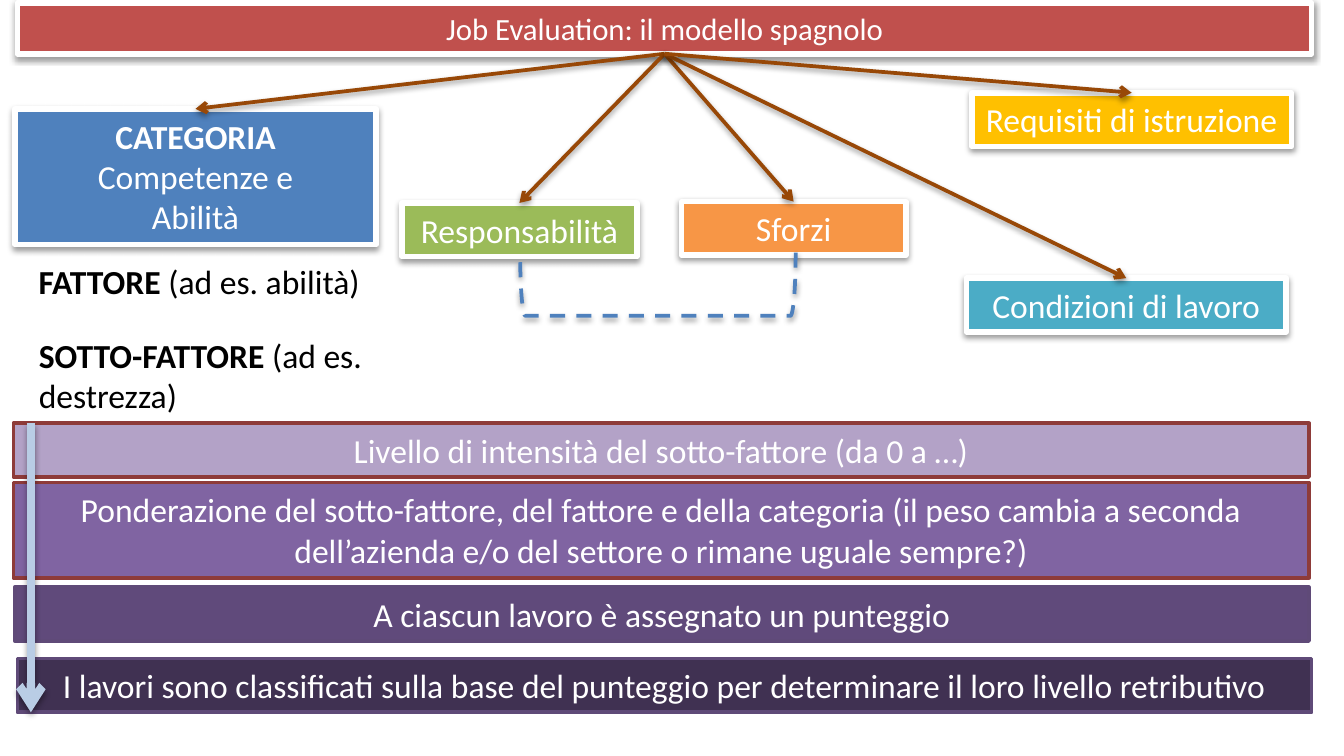
from lxml import etree
from pptx import Presentation
from pptx.dml.color import RGBColor
from pptx.enum import dml, shapes, text
from pptx.oxml import ns
from pptx.util import Inches, Pt

COLORS = {
    "white": "FFFFFF", "black": "000000", "red": "C0504D", "dark red": "8E3B39",
    "blue": "4F81BD", "pale blue": "B9CDE5", "green": "9BBB59", "orange": "F79646",
    "teal": "4BACC6", "gold": "FFC000", "brown": "984807", "lilac": "B3A2C7",
    "violet": "8064A2", "purple": "604A7B", "plum": "5F4A78", "dark purple": "403152",
}

# Content: a text is a list of paragraphs, a paragraph a list of (words, bold)
TITLE = [[("Job Evaluation: il modello spagnolo", False)]]
TITLE_BOX = (0.13, 0.02, 9.63, 0.38)

# text, fill, box
CATEGORIES = [
    ([[("CATEGORIA", True)], [("Competenze e", False)], [("Abilità", False)]],
     "blue", (0.11, 0.81, 2.69, 1.01)),
    ([[("Responsabilità", False)]], "green", (2.99, 1.51, 1.75, 0.4)),
    ([[("Sforzi", False)]], "orange", (5.07, 1.5, 1.67, 0.4)),
    ([[("Condizioni di lavoro", False)]], "teal", (7.19, 2.07, 2.38, 0.4)),
    ([[("Requisiti di istruzione", False)]], "gold", (7.23, 0.69, 2.38, 0.4)),
]

FACTORS = [
    ([[("FATTORE", True), (" (ad es. abilità)", False)]], (0.19, 1.89, 2.63, 0.4)),
    ([[("SOTTO-FATTORE", True), (" (ad es. destrezza)", False)]],
     (0.19, 2.44, 2.62, 0.71)),
]

# words, fill, outline, box
STEPS = [
    ("Livello di intensità del sotto-fattore (da 0 a …)",
     "lilac", "dark red", (0.1, 3.15, 9.64, 0.4)),
    ("Ponderazione del sotto-fattore, del fattore e della categoria (il peso cambia "
     "a seconda dell’azienda e/o del settore o rimane uguale sempre?)",
     "violet", "dark red", (0.1, 3.59, 9.64, 0.71)),
    ("A ciascun lavoro è assegnato un punteggio",
     "purple", "plum", (0.11, 4.37, 9.63, 0.4)),
    ("I lavori sono classificati sulla base del punteggio per determinare il loro "
     "livello retributivo", "dark purple", "plum", (0.13, 4.9, 9.63, 0.4)),
]

# Widescreen slide, 16 to 9
presentation = Presentation()
presentation.slide_width = Inches(10)
presentation.slide_height = Inches(10 * 9 / 16)
slide = presentation.slides.add_slide(presentation.slide_layouts[6])


def rgb(name):
    return RGBColor.from_string(COLORS[name])


def set_shadow(shape, visible):
    effects = etree.SubElement(shape._element.spPr, ns.qn("a:effectLst"))
    if visible:
        shadow = etree.SubElement(effects, ns.qn("a:outerShdw"), blurRad="40000",
                                  dist="20000", dir="5400000", rotWithShape="0")
        color = etree.SubElement(shadow, ns.qn("a:srgbClr"), val=COLORS["black"])
        etree.SubElement(color, ns.qn("a:alpha"), val="38000")


def set_line(shape, color, width):
    shape.line.color.rgb = rgb(color)
    shape.line.width = Pt(width)


def write(shape, paragraphs, size=18, color="white", align=text.PP_ALIGN.CENTER):
    frame = shape.text_frame
    frame.word_wrap = True
    frame.auto_size = text.MSO_AUTO_SIZE.SHAPE_TO_FIT_TEXT
    frame.vertical_anchor = text.MSO_ANCHOR.TOP
    for index, runs in enumerate(paragraphs):
        paragraph = frame.add_paragraph() if index else frame.paragraphs[0]
        paragraph.alignment = align
        for words, bold in runs:
            run = paragraph.add_run()
            run.text = words
            run.font.name, run.font.size, run.font.bold = "Calibri", Pt(size), bold
            run.font.color.rgb = rgb(color)


def add_box(paragraphs, fill, box, outline="white", width=3, shadow=True, size=18):
    shape = slide.shapes.add_shape(shapes.MSO_SHAPE.RECTANGLE, *map(Inches, box))
    shape.fill.solid()
    shape.fill.fore_color.rgb = rgb(fill)
    set_line(shape, outline, width)
    set_shadow(shape, shadow)
    write(shape, paragraphs, size=size)


def add_arrow(start, end, color="brown", width=2):
    arrow = slide.shapes.add_connector(shapes.MSO_CONNECTOR.STRAIGHT,
                                       *map(Inches, start + end))
    set_line(arrow, color, width)
    line = arrow._element.spPr.find(ns.qn("a:ln"))
    etree.SubElement(line, ns.qn("a:tailEnd"), type="arrow")
    set_shadow(arrow, True)


# Title and categories, each joined to the title by an arrow
add_box(TITLE, "red", TITLE_BOX, size=16.5)
left, top, width, height = TITLE_BOX
origin = (left + width / 2, top + height)
for paragraphs, fill, box in CATEGORIES:
    add_box(paragraphs, fill, box)
for paragraphs, fill, (left, top, width, height) in CATEGORIES:
    add_arrow(origin, (left + width / 2, top))

# Dashed bracket between responsibility and effort
bracket = slide.shapes.add_shape(shapes.MSO_SHAPE.LEFT_BRACKET,
                                 *map(Inches, (4.66, 1.09, 0.47, 2.05)))
bracket.rotation = 270
bracket.fill.background()
set_line(bracket, "blue", 2)
bracket.line.dash_style = dml.MSO_LINE.DASH
set_shadow(bracket, True)

# Factors
for paragraphs, box in FACTORS:
    write(slide.shapes.add_textbox(*map(Inches, box)), paragraphs,
          color="black", align=text.PP_ALIGN.LEFT)

# Steps, with the arrow that runs down through them
for words, fill, outline, box in STEPS:
    add_box([[(words, False)]], fill, box, outline=outline, width=2, shadow=False)
add_arrow((0.23, 3.15), (0.23, 5.3), color="pale blue", width=4.5)

presentation.save("out.pptx")
